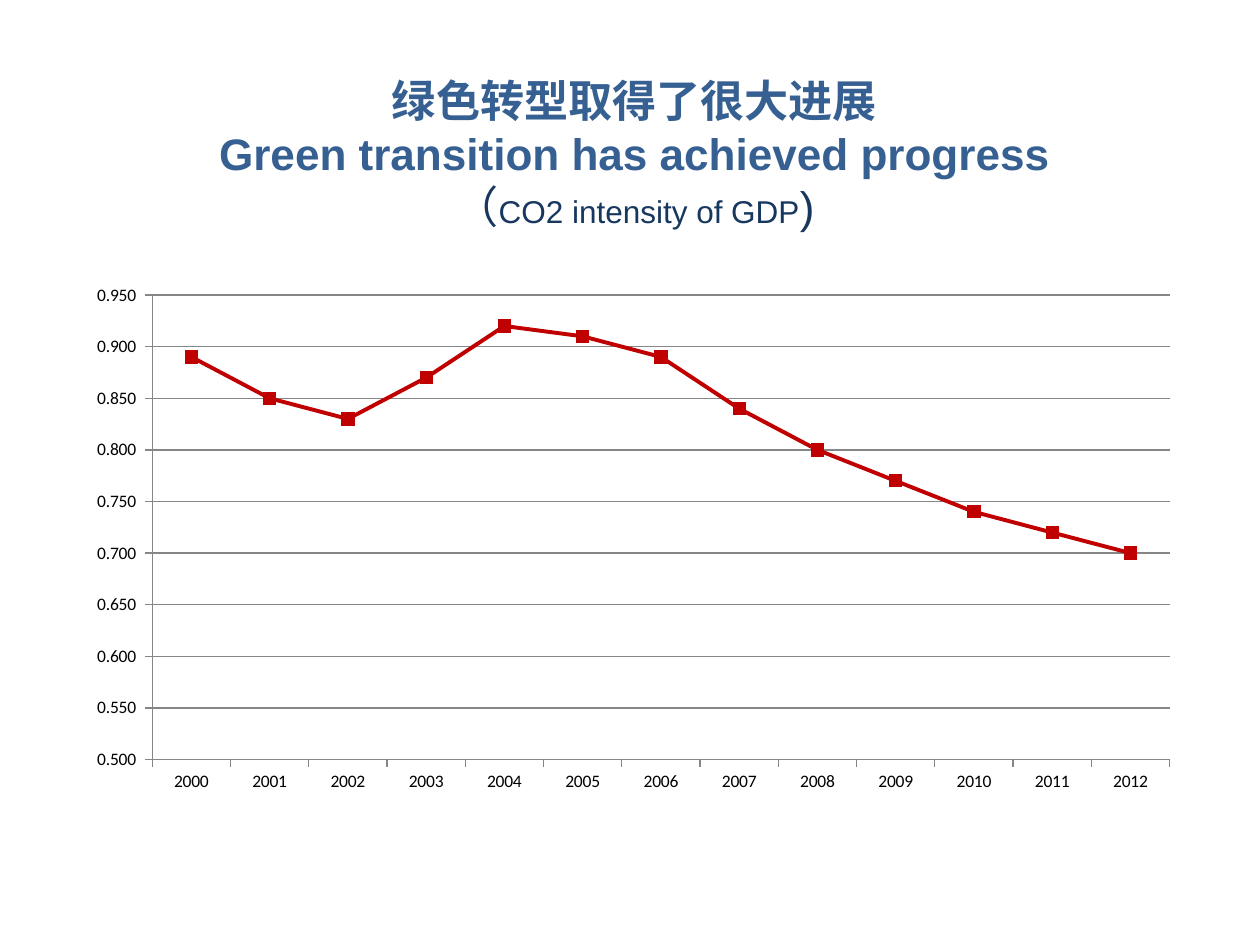
import pptx
import pptx.chart.data
import pptx.dml.color
import pptx.enum.chart
import pptx.enum.text
import pptx.oxml
import pptx.oxml.ns
import pptx.util

RGB = pptx.dml.color.RGBColor
BLUE = RGB(0x37, 0x60, 0x92)
NAVY = RGB(0x17, 0x37, 0x5E)
RED = RGB(0xC0, 0x00, 0x00)
GREY = RGB(0x86, 0x86, 0x86)
BLACK = RGB(0x00, 0x00, 0x00)
CJK = "Noto Sans CJK SC"
LINES = [
    [("绿色转型取得了很大进展", 25.2, CJK, BLUE, True)],
    [("Green transition has achieved progress", 25.2, "Arial", BLUE, True)],
    [("（", 25.2, "Arial", NAVY, False),
     ("CO2 intensity of GDP", 18, "Arial", NAVY, False),
     (")", 25.2, "Arial", NAVY, False)],
]
YEARS = [str(year) for year in range(2000, 2013)]
RATES = [0.89, 0.85, 0.83, 0.87, 0.92, 0.91, 0.89,
         0.84, 0.8, 0.77, 0.74, 0.72, 0.7]
PLOT = {"x": 0.07, "y": 0.04, "w": 0.91, "h": 0.88}


def px(count):
    """Turn pixels into EMU."""
    return pptx.util.Emu(round(count * 914400 / 126))


def add_title(slide, box):
    """Place the centred two-language heading in the box."""
    frame = slide.shapes.add_textbox(*map(px, box)).text_frame
    frame.word_wrap = True
    frame.vertical_anchor = pptx.enum.text.MSO_ANCHOR.MIDDLE
    para = frame.paragraphs[0]
    para.alignment = pptx.enum.text.PP_ALIGN.CENTER
    for row, parts in enumerate(LINES):
        if row:
            para.add_line_break()
        for text, size, face, color, bold in parts:
            run = para.add_run()
            run.text = text
            font = run.font
            font.size, font.name, font.bold = pptx.util.Pt(size), face, bold
            font.color.rgb = color
            east = pptx.oxml.parse_xml(
                f'<a:ea {pptx.oxml.ns.nsdecls("a")} typeface="{CJK}"/>')
            font._element.find(pptx.oxml.ns.qn("a:latin")).addnext(east)


def set_plot(chart):
    """Fix the inner plot area as fractions of the chart."""
    area = chart._chartSpace.chart.plotArea
    for old in area.findall(pptx.oxml.ns.qn("c:layout")):
        area.remove(old)
    modes = "".join(f'<c:{key}Mode val="edge"/>' for key in "xy")
    sizes = "".join(f'<c:{key} val="{val}"/>' for key, val in PLOT.items())
    area.insert(0, pptx.oxml.parse_xml(
        f'<c:layout {pptx.oxml.ns.nsdecls("c")}><c:manualLayout>'
        f'<c:layoutTarget val="inner"/>{modes}{sizes}'
        '</c:manualLayout></c:layout>'))


def add_graph(slide, box):
    """Place the line chart of carbon intensity in the box."""
    kinds = pptx.enum.chart
    data = pptx.chart.data.CategoryChartData()
    data.categories = YEARS
    data.add_series("Series 1", RATES)
    chart = slide.shapes.add_chart(
        kinds.XL_CHART_TYPE.LINE_MARKERS, *map(px, box), data).chart
    chart.has_legend = chart.has_title = False
    chart.font.size, chart.font.name = pptx.util.Pt(10), "Calibri"
    chart.font.color.rgb = BLACK
    set_plot(chart)

    rates = chart.value_axis
    rates.minimum_scale, rates.maximum_scale = 0.5, 0.95
    rates.major_unit = 0.05
    rates.has_major_gridlines = True
    rates.tick_labels.number_format = r"#,##0.000_);[Red]\(#,##0.000\)"
    rates.tick_labels.number_format_is_linked = False
    for axis in (rates, chart.category_axis):
        axis.major_tick_mark = kinds.XL_TICK_MARK.OUTSIDE
    for item in (rates, chart.category_axis, rates.major_gridlines):
        item.format.line.color.rgb = GREY
        item.format.line.width = pptx.util.Pt(0.75)

    chart.plots[0].vary_by_categories = False
    line = chart.plots[0].series[0]
    line.smooth = False
    line.format.line.color.rgb = RED
    line.format.line.width = pptx.util.Pt(2.25)
    mark = line.marker
    mark.style, mark.size = kinds.XL_MARKER_STYLE.SQUARE, 7
    mark.format.fill.solid()
    mark.format.fill.fore_color.rgb = RED
    mark.format.line.color.rgb = RED


def main():
    """Build and save the slide."""
    deck = pptx.Presentation()
    deck.slide_width, deck.slide_height = px(1260), px(945)
    slide = deck.slides.add_slide(deck.slide_layouts[6])
    add_title(slide, (63, 65, 1143, 176))
    add_graph(slide, (74, 274, 1118, 528))
    deck.save("out.pptx")


if __name__ == "__main__":
    main()
